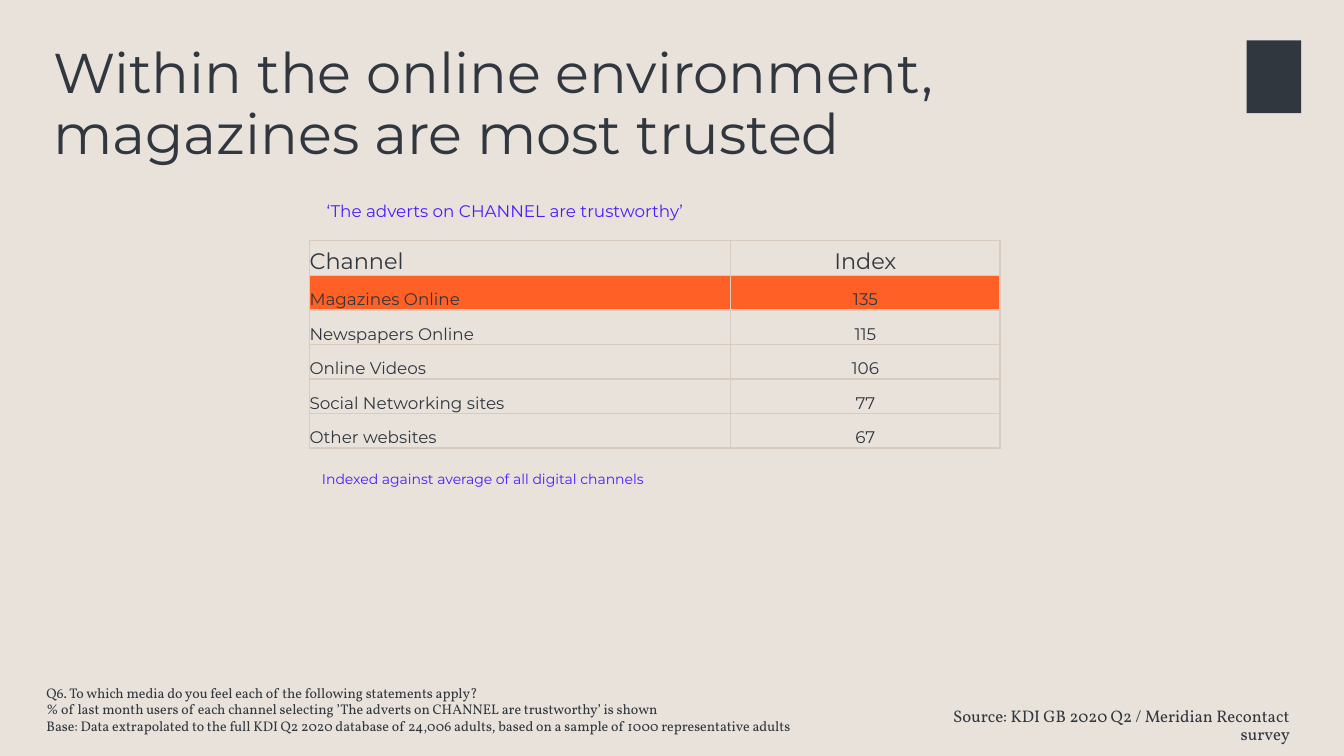
from lxml import etree
from pptx import Presentation
from pptx import util as u
from pptx.dml.color import RGBColor
from pptx.enum import shapes, text
from pptx.oxml import ns

theme = {
    "paper": RGBColor.from_string("E9E2DB"),
    "ink": RGBColor.from_string("30373F"),
    "note": RGBColor.from_string("491DFF"),
    "mark": RGBColor.from_string("FF6025"),
    "rule": "D8CBBF",
    "sans": "Montserrat",
    "serif": "Vollkorn",
    "title": u.Pt(40),
    "head": u.Pt(16),
    "body": u.Pt(12),
    "small": u.Pt(10),
}
anchor, align, fit = text.MSO_ANCHOR, text.PP_ALIGN, text.MSO_AUTO_SIZE


def write(frame, lines, font, size, tint, frame_set, para_set):
    """Fill a text frame, one paragraph a line."""
    for name, value in frame_set.items():
        setattr(frame, name, value)
    for i, line in enumerate(lines):
        para = frame.add_paragraph() if i else frame.paragraphs[0]
        for name, value in para_set.items():
            setattr(para, name, value)
        run = para.add_run()
        run.text = line
        run.font.name = theme[font]
        run.font.size = theme[size]
        run.font.color.rgb = theme[tint]


def pad(gap):
    return {"margin_" + side: u.Cm(gap) for side in ("left", "top", "right", "bottom")}


# Slide
deck = Presentation()
deck.slide_width, deck.slide_height = u.Cm(33.87), u.Cm(19.05)
slide = deck.slides.add_slide(deck.slide_layouts[6])
slide.background.fill.solid()
slide.background.fill.fore_color.rgb = theme["paper"]

# Plain block in the corner
block = slide.shapes.add_shape(
    shapes.MSO_SHAPE.RECTANGLE, u.Cm(31.42), u.Cm(1.02), u.Cm(1.37), u.Cm(1.83))
block.shadow.inherit = False
block.fill.solid()
block.fill.fore_color.rgb = theme["ink"]
block.line.fill.background()

# Index table
rows = [
    ("Channel", "Index"),
    ("Magazines Online", "135"),
    ("Newspapers Online", "115"),
    ("Online Videos", "106"),
    ("Social Networking sites", "77"),
    ("Other websites", "67"),
]
wide, tall = (10.62, 6.78), 0.87
table = slide.shapes.add_table(
    len(rows), len(wide), u.Cm(7.8), u.Cm(6.07),
    u.Cm(sum(wide)), u.Cm(tall * len(rows))).table
table.first_row = table.horz_banding = False
for col, width in zip(table.columns, wide):
    col.width = u.Cm(width)
for r, row in enumerate(rows):
    table.rows[r].height = u.Cm(tall)
    for c, label in enumerate(row):
        cell = table.cell(r, c)
        for name, value in {"vertical_anchor": anchor.BOTTOM, **pad(0)}.items():
            setattr(cell, name, value)
        write(cell.text_frame, [label], "sans", "body" if r else "head", "ink",
              {}, {"alignment": align.CENTER if c else align.LEFT})
        # Cell borders
        props = cell._tc.get_or_add_tcPr()
        for side in ("a:lnL", "a:lnR", "a:lnT", "a:lnB"):
            line = etree.SubElement(props, ns.qn(side), w=str(u.Pt(1)))
            solid = etree.SubElement(line, ns.qn("a:solidFill"))
            etree.SubElement(solid, ns.qn("a:srgbClr"), val=theme["rule"])
        # Highlight the top channel
        if r == 1:
            cell.fill.solid()
            cell.fill.fore_color.rgb = theme["mark"]
        else:
            cell.fill.background()

# Title, source, footnotes and captions
boxes = [
    ((1.09, 1.02, 28.24, 3.68),
     ["Within the online environment, magazines are most trusted"],
     "sans", "title", "ink", {}, {"line_spacing": 0.9}),
    ((23.44, 17.78, 9.32, 1.04),
     ["Source: KDI GB 2020 Q2 / Meridian Recontact survey"],
     "serif", "body", "ink", {"vertical_anchor": anchor.MIDDLE},
     {"alignment": align.RIGHT, "line_spacing": 0.9, "space_before": u.Pt(10)}),
    ((1.09, 16.41, 22.05, 2.18),
     ["Q6. To which media do you feel each of the following statements apply?",
      "% of last month users of each channel selecting ’The adverts on CHANNEL are trustworthy’ is shown",
      "Base: Data extrapolated to the full KDI Q2 2020 database of 24,006 adults, "
      "based on a sample of 1000 representative adults"],
     "serif", "small", "ink", {"vertical_anchor": anchor.BOTTOM, **pad(0.08)}, {}),
    ((7.82, 11.79, 8.69, 0.56),
     ["Indexed against average of all digital channels"],
     "sans", "small", "note",
     {"vertical_anchor": anchor.MIDDLE, "word_wrap": False,
      "auto_size": fit.SHAPE_TO_FIT_TEXT, **pad(0.08)},
     {"alignment": align.CENTER}),
    ((8.23, 5.05, 11.43, 0.51),
     ["‘The adverts on CHANNEL are trustworthy’"],
     "sans", "body", "note", {"auto_size": fit.SHAPE_TO_FIT_TEXT, **pad(0)}, {}),
]
for place, lines, font, size, tint, frame_set, para_set in boxes:
    box = slide.shapes.add_textbox(*map(u.Cm, place))
    write(box.text_frame, lines, font, size, tint,
          {"word_wrap": True, **frame_set}, para_set)

deck.save("out.pptx")
